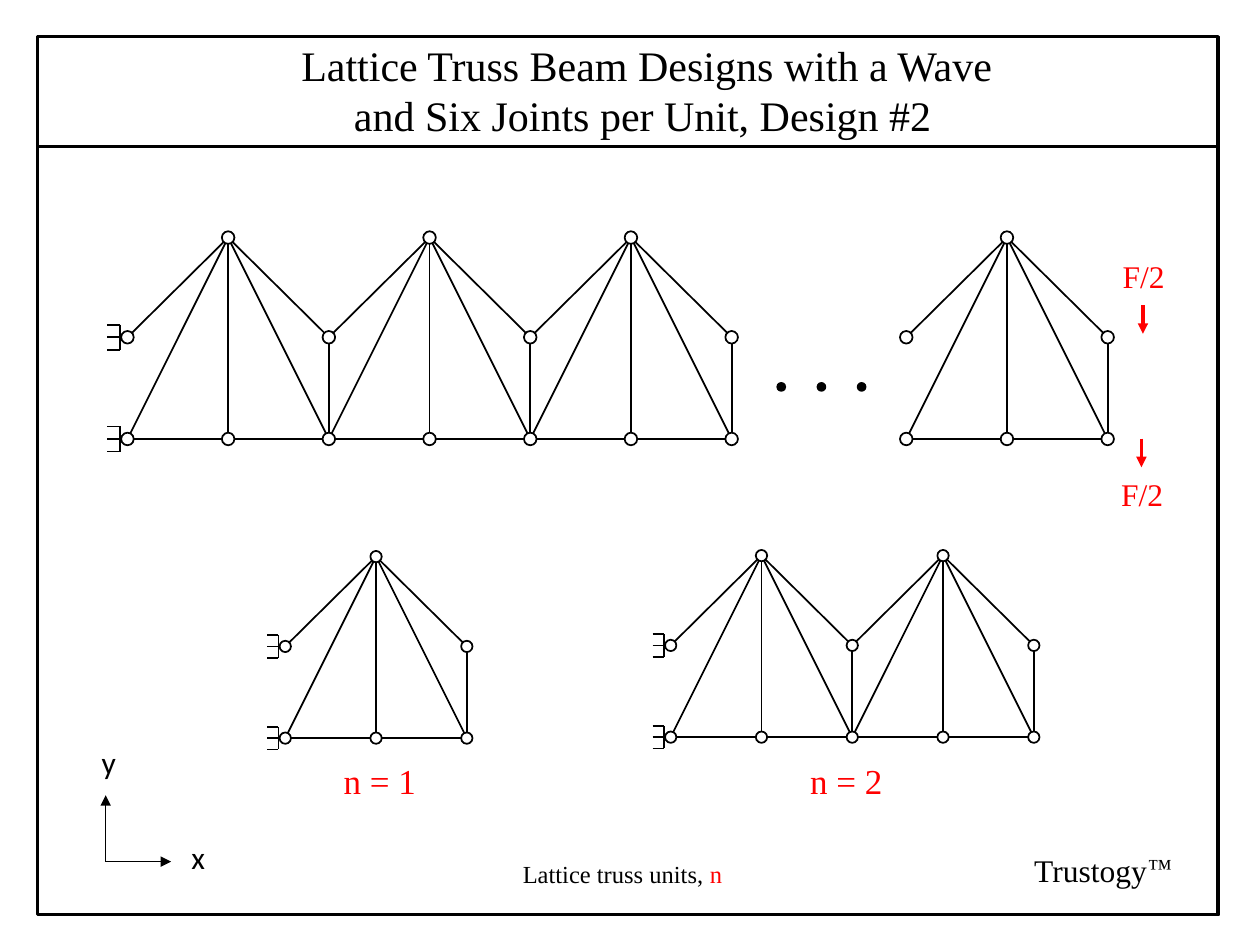
"""Build a slide of lattice truss beams with two example units and their loads."""
import pptx
import pptx.dml.color
import pptx.enum.shapes
import pptx.enum.text
import pptx.oxml.ns
import pptx.util
from lxml import etree

Cm = pptx.util.Cm
BLACK, WHITE, RED = "000000", "FFFFFF", "FF0000"
SERIF, SANS = "Times New Roman", "Calibri"


def color(hex_text):
    return pptx.dml.color.RGBColor.from_string(hex_text)


def add_xml(parent, tag, **attributes):
    return etree.SubElement(parent, pptx.oxml.ns.qn(tag), attributes)


class TrussSlide:
    def __init__(self, slide):
        self.slide = slide
        self.shapes = slide.shapes

    def shape(self, preset, left, top, width, height, fill=None, weight=1):
        item = self.shapes.add_shape(preset, Cm(left), Cm(top), Cm(width), Cm(height))
        item.shadow.inherit = False
        if fill:
            item.fill.solid()
            item.fill.fore_color.rgb = color(fill)
        else:
            item.fill.background()
        item.line.color.rgb = color(BLACK)
        item.line.width = pptx.util.Pt(weight)

    def circle(self, center, diameter, fill=WHITE):
        x, y = center
        self.shape(pptx.enum.shapes.MSO_SHAPE.OVAL, x - diameter / 2, y - diameter / 2,
                   diameter, diameter, fill)

    def line(self, start, end, weight=1, ink=BLACK, arrow=False):
        item = self.shapes.add_connector(pptx.enum.shapes.MSO_CONNECTOR.STRAIGHT,
                                         *map(Cm, (*start, *end)))
        item.line.color.rgb = color(ink)
        item.line.width = pptx.util.Pt(weight)
        if arrow:
            add_xml(item.line._get_or_add_ln(), "a:tailEnd", type="triangle")
        add_xml(item._element.spPr, "a:effectLst")

    def runs(self, paragraph, pieces, size, face):
        paragraph.alignment = pptx.enum.text.PP_ALIGN.LEFT
        for words, ink in pieces:
            run = paragraph.add_run()
            run.text = words
            run.font.size = pptx.util.Pt(size)
            run.font.name = face
            run.font.color.rgb = color(ink)

    def text(self, left, top, width, height, pieces, size=18, face=SERIF):
        box = self.shapes.add_textbox(Cm(left), Cm(top), Cm(width), Cm(height))
        box.text_frame.word_wrap = True
        self.runs(box.text_frame.paragraphs[0], pieces, size, face)

    def title(self, left, top, width, height, lines, indent):
        heading = self.shapes.title
        heading.left, heading.top = Cm(left), Cm(top)
        heading.width, heading.height = Cm(width), Cm(height)
        frame = heading.text_frame
        frame.auto_size = pptx.enum.text.MSO_AUTO_SIZE.NONE
        frame.vertical_anchor = pptx.enum.text.MSO_ANCHOR.TOP
        for index, words in enumerate(lines):
            paragraph = frame.add_paragraph() if index else frame.paragraphs[0]
            self.runs(paragraph, [(words, BLACK)], 24, SERIF)
            paragraph._p.get_or_add_pPr().set("marL", str(Cm(indent * index)))

    def support(self, joint, pitch):
        x, y = joint
        reach = pitch / 8
        wall = x - 0.075 * pitch
        self.line((wall, y - reach), (wall, y + reach))
        for offset in (-reach, 0, reach):
            self.line((wall - reach, y + offset), (wall, y + offset))

    def truss(self, left, base, pitch, units, supported=True):
        bottom = [(left + i * pitch, base) for i in range(2 * units + 1)]
        shoulders = [(x, base - 1.01 * pitch) for x, _ in bottom[::2]]
        apexes = [(x, base - 2 * pitch) for x, _ in bottom[1::2]]
        for unit, apex in enumerate(apexes):
            feet = bottom[2 * unit:2 * unit + 3]
            for end in (*feet, *shoulders[unit:unit + 2]):
                self.line(apex, end)
            self.line(feet[0], feet[1])
            self.line(feet[1], feet[2])
            self.line(feet[2], shoulders[unit + 1])
        if supported:
            self.support(bottom[0], pitch)
            self.support(shoulders[0], pitch)
        for joint in bottom + shoulders + apexes:
            self.circle(joint, pitch / 8)


def main():
    deck = pptx.Presentation()
    deck.slide_width, deck.slide_height = Cm(25.4), Cm(19.05)
    page = TrussSlide(deck.slides.add_slide(deck.slide_layouts[5]))

    page.title(5.82, 0.66, 14.94, 2.31, ["Lattice Truss Beam Designs with a Wave",
                                         "and Six Joints per Unit, Design #2"], 1.06)
    page.shape(pptx.enum.shapes.MSO_SHAPE.RECTANGLE, 0.76, 0.74, 23.8, 17.7, weight=2)
    page.line((0.76, 2.95), (24.56, 2.95), 2)

    page.truss(2.57, 8.85, 2.03, 3)
    page.truss(18.27, 8.85, 2.03, 1, supported=False)
    page.truss(5.75, 14.88, 1.83, 1)
    page.truss(13.52, 14.86, 1.83, 2)
    for step in range(3):
        page.circle((15.75 + 0.81 * step, 7.8), 0.16, BLACK)

    for load_x, load_y, label_y in ((23.04, 6.15, 5.05), (23.01, 8.84, 9.45)):
        page.line((load_x, load_y), (load_x, load_y + 0.58), 2, RED, arrow=True)
        page.text(load_x - 0.66, label_y, 1.52, 1.02, [("F/2", RED)])

    origin = (2.13, 17.37)
    for tip, axis, left, top in (((3.45, 17.37), "x", 3.61, 16.76),
                                 ((2.13, 16.03), "y", 1.8, 14.86)):
        page.line(origin, tip, 0.5, arrow=True)
        page.text(left, top, 0.79, 1.02, [(axis, BLACK)], face=SANS)

    for left, count in ((6.68, 1), (16.08, 2)):
        page.text(left, 15.19, 2.3, 1.12, [(f"n = {count}", RED)], 20)
    page.text(10.29, 17.2, 4.7, 0.86, [("Lattice truss units, ", BLACK), ("n", RED)], 14)
    page.text(20.6, 17.04, 2.77, 1.02, [("Trustogy", BLACK)])
    page.text(22.89, 17.05, 1.45, 0.86, [("™", BLACK)], 14)

    deck.save("out.pptx")


if __name__ == "__main__":
    main()
